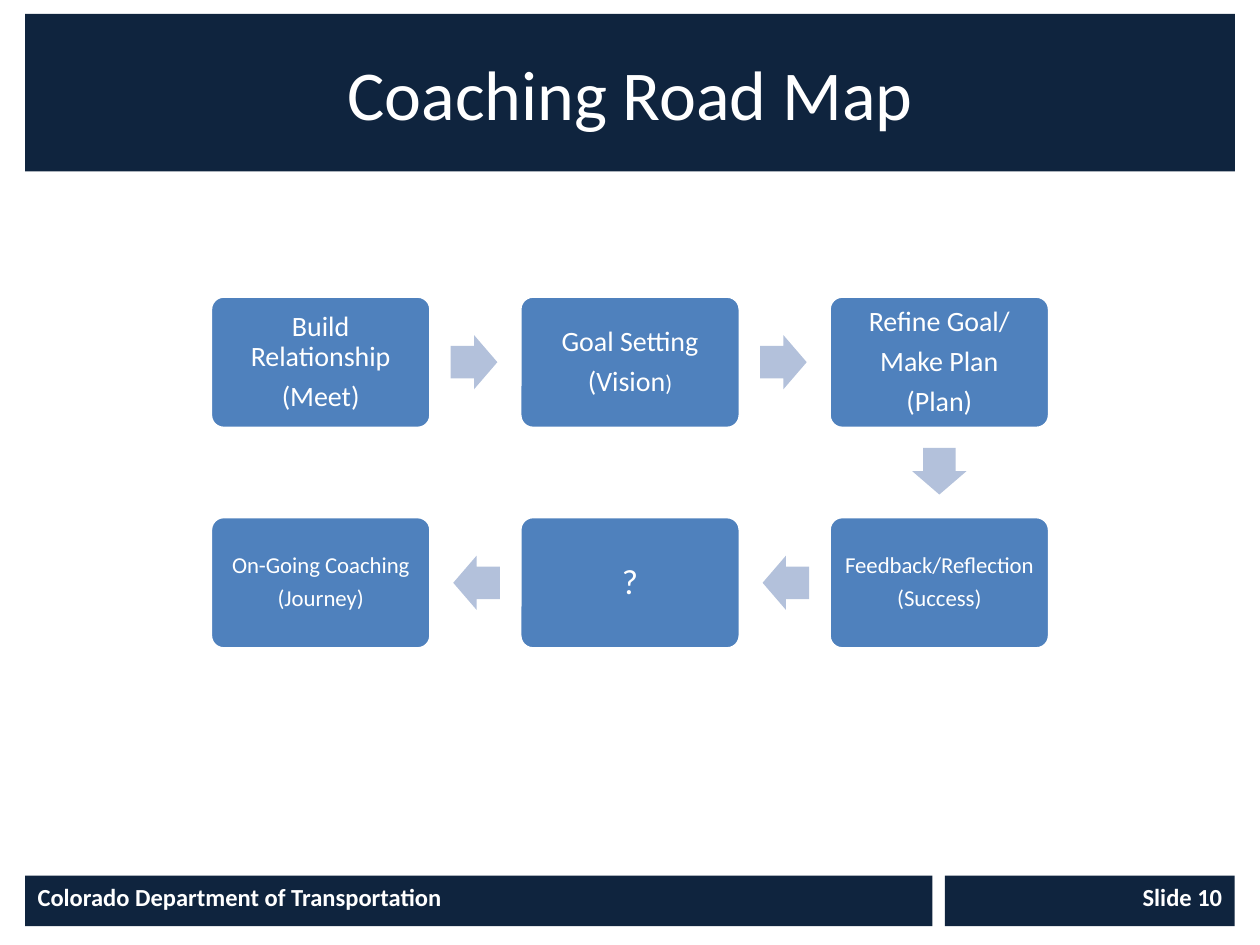
from dataclasses import dataclass

from pptx import Presentation
from pptx.dml.color import RGBColor
from pptx.enum import shapes, text
from pptx.util import Inches, Pt


@dataclass(frozen=True)
class Theme:
    """Colours, font and type sizes of the slide."""
    navy: str = "0F243E"
    blue: str = "4F81BD"
    pale: str = "B3C1DB"
    white: str = "FFFFFF"
    font: str = "Calibri"
    title: int = 40
    mark: int = 20
    body: int = 16
    footer: int = 14
    small: int = 13


T = Theme()
WIDTH, HEIGHT = 10, 7.5
STEP_W, STEP_H = 1.75, 1.05
PITCH_X, PITCH_Y = 2.455, 1.75
LEFT, TOP = (WIDTH - 2 * PITCH_X - STEP_W) / 2, 2.35
ARROW_W, ARROW_H, ARROW_LAG = 0.37, 0.43, 0.01

# (column, row), type size, paragraphs; a tuple holds a text and its smaller tail
STEPS = [
    ((0, 0), T.body, ["Build Relationship", "(Meet)"]),
    ((1, 0), T.body, ["Goal Setting", ("(Vision", ")")]),
    ((2, 0), T.body, ["Refine Goal/", "Make Plan", "(Plan)"]),
    ((2, 1), T.small, ["Feedback/Reflection", "(Success)"]),
    ((1, 1), T.mark, ["?"]),
    ((0, 1), T.small, ["On-Going Coaching", "(Journey)"]),
]


def paint(sp, fill, line=None):
    """Give a shape a plain fill and an optional outline."""
    sp.fill.solid()
    sp.fill.fore_color.rgb = RGBColor.from_string(fill)
    if line:
        sp.line.color.rgb = RGBColor.from_string(line)
        sp.line.width = Pt(2)
    else:
        sp.line.fill.background()
    sp.shadow.inherit = False


def write(sp, lines, size, align="CENTER", anchor="MIDDLE", bold=False,
          inset=0.1, spacing=1.0, after=0):
    """Fill a shape with formatted paragraphs."""
    tf = sp.text_frame
    tf.word_wrap = True
    tf.auto_size = text.MSO_AUTO_SIZE.NONE
    tf.vertical_anchor = text.MSO_ANCHOR[anchor]
    tf.margin_left = tf.margin_right = Inches(inset)
    tf.margin_top = tf.margin_bottom = Inches(0.05)
    for i, line in enumerate(lines):
        p = tf.add_paragraph() if i else tf.paragraphs[0]
        p.alignment = text.PP_ALIGN[align]
        p.line_spacing = spacing
        p.space_after = Pt(after)
        parts = (line,) if isinstance(line, str) else line
        for part, points in zip(parts, (size, T.small)):
            r = p.add_run()
            r.text = part
            r.font.name, r.font.size, r.font.bold = T.font, Pt(points), bold
            r.font.color.rgb = RGBColor.from_string(T.white)


def add(s, kind, x, y, w, h):
    """Add a preset shape placed in inches."""
    return s.shapes.add_shape(shapes.MSO_SHAPE[kind], *map(Inches, (x, y, w, h)))


def add_title(s, title):
    """Move and format the title placeholder as a banner."""
    sp = s.shapes.title
    sp.left, sp.top, sp.width, sp.height = map(Inches, (0.2, 0.11, 9.6, 1.25))
    paint(sp, T.navy)
    write(sp, [title], T.title)


def add_footer(s, label, x, w, align):
    """Add one bar of the footer."""
    sp = add(s, "RECTANGLE", x, 6.95, w, 0.4)
    paint(sp, T.navy)
    write(sp, [label], T.footer, align=align, anchor="TOP", bold=True)


def add_step(s, cell, size, lines):
    """Add one step of the road map in its grid cell."""
    col, row = cell
    sp = add(s, "ROUNDED_RECTANGLE", LEFT + col * PITCH_X, TOP + row * PITCH_Y,
             STEP_W, STEP_H)
    sp.adjustments[0] = 0.1
    paint(sp, T.blue, T.white)
    write(sp, lines, size, inset=0.08, spacing=0.9, after=0.35 * size)


def add_arrow(s, start, end):
    """Add a block arrow in the gap between two neighbouring cells."""
    dx, dy = end[0] - start[0], end[1] - start[1]
    x = LEFT + STEP_W / 2 + (start[0] + dx / 2) * PITCH_X - dx * ARROW_LAG
    y = TOP + STEP_H / 2 + (start[1] + dy / 2) * PITCH_Y - dy * ARROW_LAG
    sp = add(s, "RIGHT_ARROW", x - ARROW_W / 2, y - ARROW_H / 2, ARROW_W, ARROW_H)
    sp.adjustments[0], sp.adjustments[1] = 0.6, 0.5
    sp.rotation = {(1, 0): 0, (0, 1): 90, (-1, 0): 180}[dx, dy]
    paint(sp, T.pale)


def main():
    """Build the slide and save it."""
    prs = Presentation()
    prs.slide_width, prs.slide_height = Inches(WIDTH), Inches(HEIGHT)
    s = prs.slides.add_slide(prs.slide_layouts[5])
    add_title(s, "Coaching Road Map")
    add_footer(s, "Colorado Department of Transportation", 0.2, 7.2, "LEFT")
    add_footer(s, "Slide 10", 7.5, 2.3, "RIGHT")
    for step in STEPS:
        add_step(s, *step)
    for here, there in zip(STEPS, STEPS[1:]):
        add_arrow(s, here[0], there[0])
    prs.save("out.pptx")


if __name__ == "__main__":
    main()
